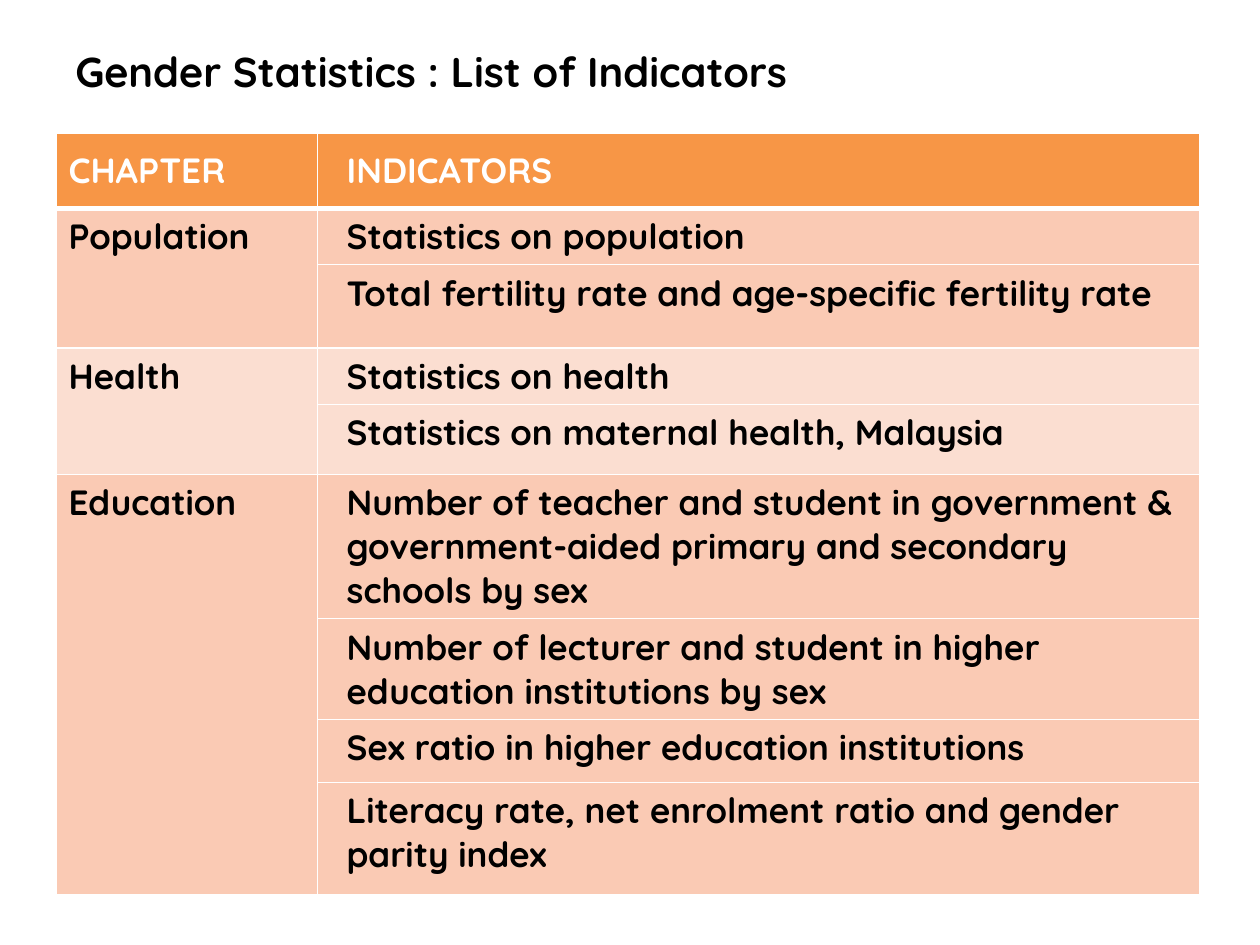
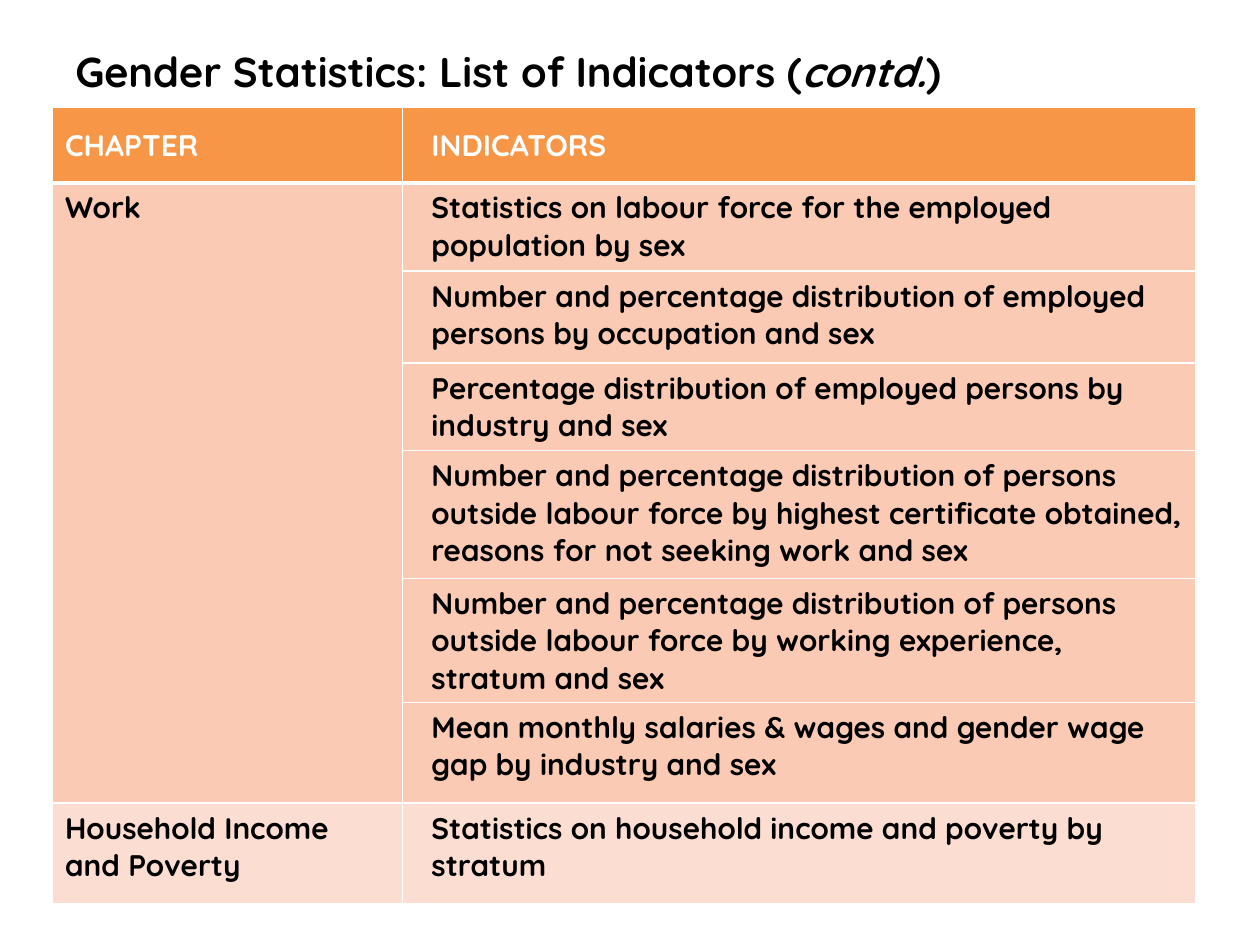
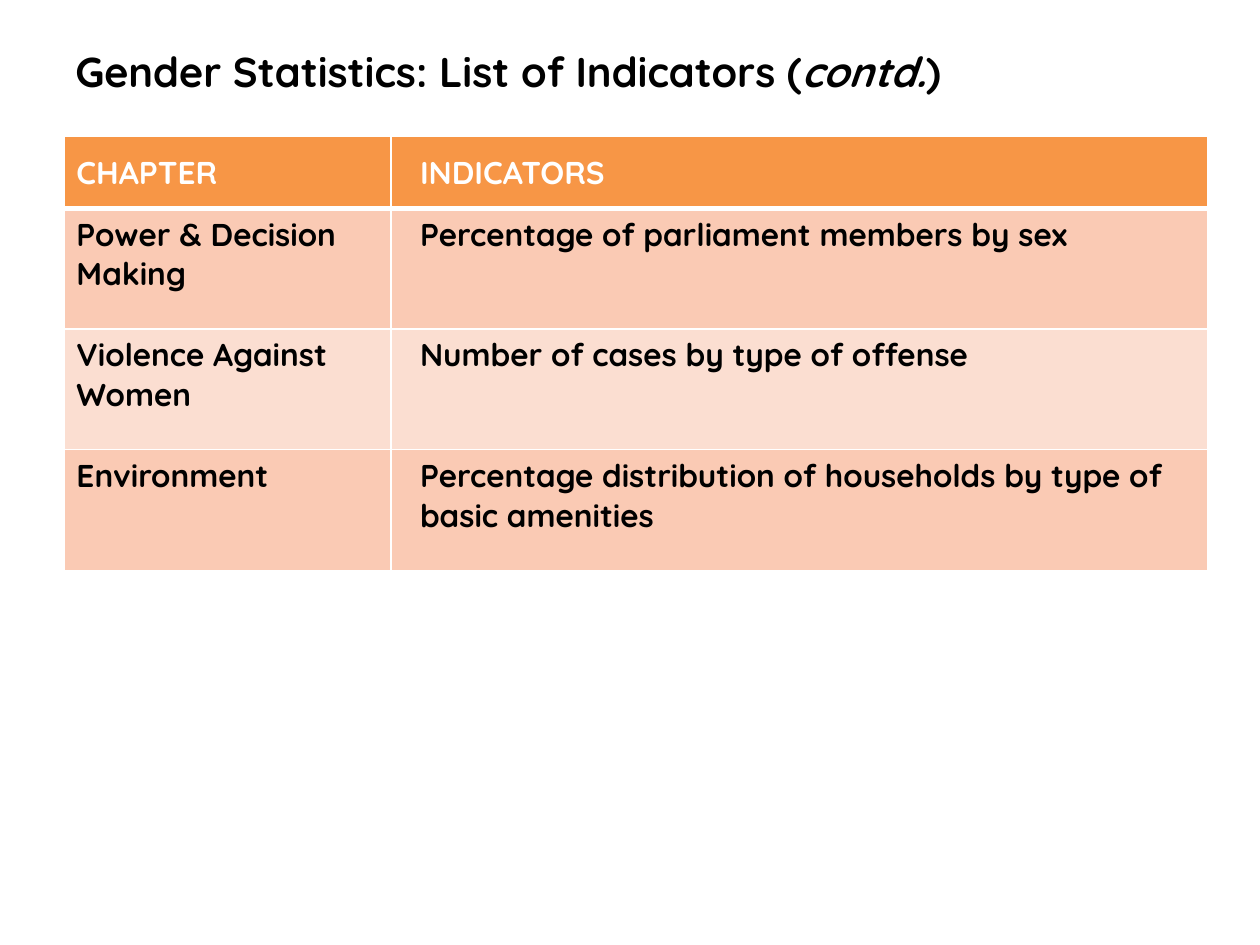
from lxml import etree
from pptx import Presentation
from pptx.dml.color import RGBColor
from pptx.enum.text import MSO_VERTICAL_ANCHOR as Anchor
from pptx.oxml.ns import qn
from pptx.util import Pt

FONT = "Quicksand"
BLACK, WHITE, ORANGE = "000000", "FFFFFF", "F79646"
BANDS = ("FACAB4", "FBDED1")
TITLE_SIZE = 23.8
THIN, THICK = 1, 3
INDICATOR_MARGIN = 16.6

TITLE = [("Gender Statistics : List of Indicators", False)]
CONTINUED = [("Gender Statistics: List of Indicators (", False), ("contd.", True), (")", False)]

# Each chapter: name, then its indicators with their row heights
POPULATION_TO_EDUCATION = [
    ("Population", [
        ("Statistics on population", 32),
        ("Total fertility rate and age-specific fertility rate", 47.5),
    ]),
    ("Health", [
        ("Statistics on health", 32),
        ("Statistics on maternal health, Malaysia", 40),
    ]),
    ("Education", [
        ("Number of teacher and student in government & government-aided "
         "primary and secondary schools by sex", 82.5),
        ("Number of lecturer and student in higher education institutions by sex", 57.5),
        ("Sex ratio in higher education institutions", 36),
        ("Literacy rate, net enrolment ratio and gender parity index", 64.5),
    ]),
]
WORK_AND_INCOME = [
    ("Work", [
        ("Statistics on labour force for the employed population by sex", 50.5),
        ("Number and percentage distribution of employed persons by occupation and sex", 52.5),
        ("Percentage distribution of employed persons by industry and sex", 50),
        ("Number and percentage distribution of persons outside labour force by "
         "highest certificate obtained, reasons for not seeking work and sex", 73),
        ("Number and percentage distribution of persons outside labour force by "
         "working experience, stratum and sex", 71),
        ("Mean monthly salaries & wages and gender wage gap by industry and sex", 57.5),
    ]),
    ("Household Income and Poverty", [
        ("Statistics on household income and poverty by stratum", 57.5),
    ]),
]
POWER_TO_ENVIRONMENT = [
    ("Power & Decision Making", [("Percentage of parliament members by sex", 69)]),
    ("Violence Against Women", [("Number of cases by type of offense", 69)]),
    ("Environment", [
        ("Percentage distribution of households by type of basic amenities", 69),
    ]),
]


def color(hex_code):
    return RGBColor.from_string(hex_code)


def add_span(para, text, size, hex_code, italic=False):
    span = para.add_run()
    span.text = text
    font = span.font
    font.name, font.size, font.bold, font.italic = FONT, Pt(size), True, italic
    font.color.rgb = color(hex_code)


def add_title(page, spans, width):
    box = page.shapes.add_textbox(Pt(36), Pt(18), Pt(width), Pt(48))
    frame = box.text_frame
    frame.word_wrap = True
    frame.vertical_anchor = Anchor.MIDDLE
    para = frame.paragraphs[0]
    para.line_spacing = 0.9
    for text, italic in spans:
        add_span(para, text, TITLE_SIZE, BLACK, italic)


def add_borders(cell, top, bottom):
    """Draw white cell borders; call before filling, as the schema puts lines first."""
    properties = cell._tc.get_or_add_tcPr()
    for side, width in (("L", THIN), ("R", THIN), ("T", top), ("B", bottom)):
        line = etree.SubElement(properties, qn(f"a:ln{side}"), w=str(Pt(width)))
        fill = etree.SubElement(line, qn("a:solidFill"))
        etree.SubElement(fill, qn("a:srgbClr"), val=WHITE)


def style_cell(cell, fill, top=THIN, bottom=THIN):
    add_borders(cell, top, bottom)
    cell.fill.solid()
    cell.fill.fore_color.rgb = color(fill)


def write_row(cells, texts, size, hex_code):
    """Write the chapter and indicator cells; a text of None is skipped."""
    cells[1].margin_left = Pt(INDICATOR_MARGIN)
    for cell, text in zip(cells, texts):
        if text:
            add_span(cell.text_frame.paragraphs[0], text, size, hex_code)


def add_indicator_table(page, chapters, left, top, widths, header_height, size):
    heights = [header_height]
    heights += [height for _, indicators in chapters for _, height in indicators]
    table = page.shapes.add_table(len(heights), len(widths), Pt(left), Pt(top),
                                  Pt(sum(widths)), Pt(sum(heights))).table
    table.horz_banding = False
    for column, width in zip(table.columns, widths):
        column.width = Pt(width)
    for row, height in zip(table.rows, heights):
        row.height = Pt(height)

    header = table.rows[0].cells
    for cell in header:
        style_cell(cell, ORANGE, bottom=THICK)
        cell.vertical_anchor = Anchor.MIDDLE
    write_row(header, ("CHAPTER", "INDICATORS"), size, WHITE)

    first = 1
    for number, (chapter, indicators) in enumerate(chapters):
        for offset, (indicator, _) in enumerate(indicators):
            index = first + offset
            cells = table.rows[index].cells
            for cell in cells:
                style_cell(cell, BANDS[number % 2], top=THICK if index == 1 else THIN)
            write_row(cells, (None if offset else chapter, indicator), size, BLACK)
        last = first + len(indicators) - 1
        if last > first:
            table.cell(first, 0).merge(table.cell(last, 0))
        first = last + 1


def main():
    deck = Presentation()
    deck.slide_width, deck.slide_height = Pt(720), Pt(540)
    slides = [
        (TITLE, 432, POPULATION_TO_EDUCATION, 32, 76, (149.5, 504), 43, 20),
        (CONTINUED, 525.6, WORK_AND_INCOME, 30, 61.5, (200, 453.5), 43, 17),
        (CONTINUED, 525.6, POWER_TO_ENVIRONMENT, 36.5, 78, (187, 466.5), 41, 18),
    ]
    for title, title_width, chapters, *layout in slides:
        page = deck.slides.add_slide(deck.slide_layouts[6])
        add_indicator_table(page, chapters, *layout)
        add_title(page, title, title_width)
    deck.save("out.pptx")


if __name__ == "__main__":
    main()
